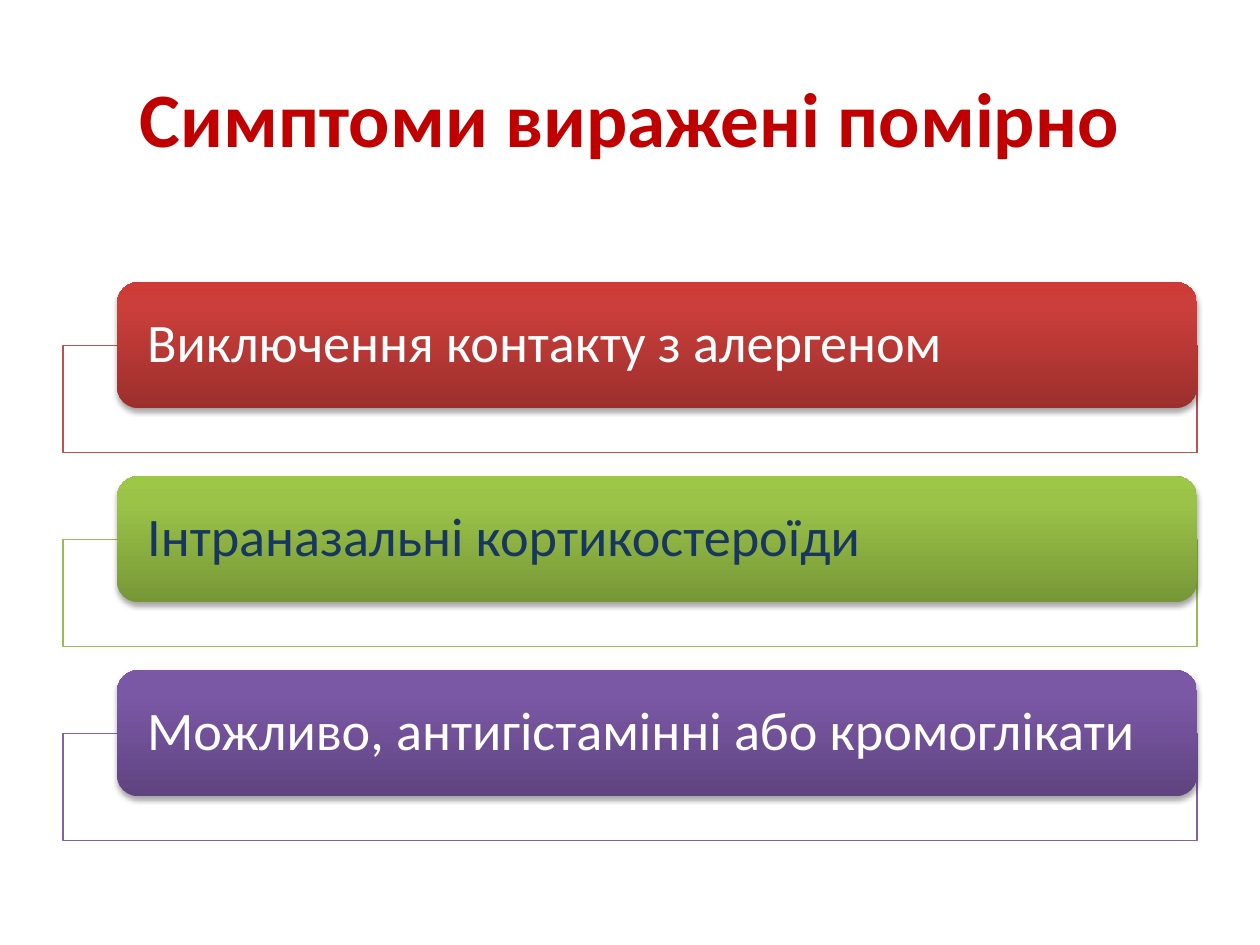
from lxml import etree
from pptx import Presentation
from pptx.dml.color import RGBColor
from pptx.enum.shapes import MSO_SHAPE
from pptx.enum.text import MSO_ANCHOR, PP_ALIGN
from pptx.oxml.ns import qn
from pptx.util import Inches, Pt

RECTANGLE = MSO_SHAPE.RECTANGLE
ROUNDED = MSO_SHAPE.ROUNDED_RECTANGLE
MIDDLE = MSO_ANCHOR.MIDDLE
LEFT, CENTER = PP_ALIGN.LEFT, PP_ALIGN.CENTER

FONT = "Calibri"
WHITE = RGBColor(0xFF, 0xFF, 0xFF)
BLACK = RGBColor(0x00, 0x00, 0x00)
NAVY = RGBColor(0x17, 0x37, 0x5E)
TITLE_RED = RGBColor(0xC0, 0x00, 0x00)
RED = RGBColor(0xC0, 0x50, 0x4D)
GREEN = RGBColor(0x9B, 0xBB, 0x59)
PURPLE = RGBColor(0x80, 0x64, 0xA2)
RED_SHADES = (RGBColor(0x9C, 0x2F, 0x2D), RGBColor(0xCB, 0x3E, 0x3A), RGBColor(0xCE, 0x3B, 0x37))
GREEN_SHADES = (RGBColor(0x77, 0x97, 0x37), RGBColor(0x9B, 0xC3, 0x48), RGBColor(0x9D, 0xC7, 0x46))
PURPLE_SHADES = (RGBColor(0x5F, 0x44, 0x80), RGBColor(0x7B, 0x58, 0xA6), RGBColor(0x7C, 0x57, 0xA8))
STOPS = (0, 80, 100)

# Text, text colour, frame colour, bar shades from bottom to top
STEPS = [
    ("Виключення контакту з алергеном", WHITE, RED, RED_SHADES),
    ("Інтраназальні кортикостероїди", NAVY, GREEN, GREEN_SHADES),
    ("Можливо, антигістамінні або кромоглікати", WHITE, PURPLE, PURPLE_SHADES),
]


def add_color(parent, color, alpha=None):
    node = etree.SubElement(parent, qn("a:srgbClr"), val=str(color))
    if alpha is not None:
        etree.SubElement(node, qn("a:alpha"), val=str(alpha * 1000))


def fill_gradient(shape, shades):
    shape.fill.gradient()
    shape.fill.gradient_angle = 90
    stop_list = shape.element.spPr.find(".//" + qn("a:gsLst"))
    for old_stop in list(stop_list):
        stop_list.remove(old_stop)
    for position, color in zip(STOPS, shades):
        add_color(etree.SubElement(stop_list, qn("a:gs"), pos=str(position * 1000)), color)


def add_shadow(shape):
    shape.shadow.inherit = False
    effects = shape.element.spPr.find(qn("a:effectLst"))
    shadow = etree.SubElement(effects, qn("a:outerShdw"), blurRad=str(Pt(3.1)),
                              dist=str(Pt(1.8)), dir="5400000", rotWithShape="0")
    add_color(shadow, BLACK, 35)


def write_line(frame, text, size, color, align, bold=False):
    frame.word_wrap = True
    frame.vertical_anchor = MIDDLE
    para = frame.paragraphs[0]
    para.alignment = align
    span = para.add_run()
    span.text = text
    span.font.name = FONT
    span.font.size = Pt(size)
    span.font.bold = bold
    span.font.color.rgb = color
    return para


def add_title(page, left, top, width, height):
    box = page.shapes.add_textbox(left, top, width, height)
    write_line(box.text_frame, "Симптоми виражені помірно", 44, TITLE_RED, CENTER, True)


def add_step(page, left, top, width, step):
    text, text_color, frame_color, shades = step

    # Outlined frame behind the bar
    frame = page.shapes.add_shape(RECTANGLE, left, top + Inches(0.5), width, Inches(0.85))
    frame.shadow.inherit = False
    frame.fill.solid()
    frame.fill.fore_color.rgb = WHITE
    frame_fill = frame.element.spPr.find(qn("a:solidFill")).find(qn("a:srgbClr"))
    etree.SubElement(frame_fill, qn("a:alpha"), val="90000")
    frame.line.color.rgb = frame_color
    frame.line.width = Pt(0.75)

    # Gradient bar with its text
    indent = Inches(0.43)
    bar = page.shapes.add_shape(ROUNDED, left + indent, top, width - indent, Inches(1))
    fill_gradient(bar, shades)
    bar.line.fill.background()
    add_shadow(bar)
    label = bar.text_frame
    label.margin_left = label.margin_right = Inches(0.19)
    label.margin_top = label.margin_bottom = 0
    para = write_line(label, text, 31, text_color, LEFT)
    para.line_spacing = 0.9


def add_steps(page, left, top, width, pitch):
    for index, step in enumerate(STEPS):
        add_step(page, left, top + index * pitch, width, step)


def main():
    deck = Presentation()
    deck.slide_width, deck.slide_height = Inches(10), Inches(7.5)
    page = deck.slides.add_slide(deck.slide_layouts[6])
    add_title(page, Inches(0.5), Inches(0.3), Inches(9), Inches(1.25))
    add_steps(page, Inches(0.5), Inches(2.24), Inches(9), Inches(1.54))
    deck.save("out.pptx")


if __name__ == "__main__":
    main()
